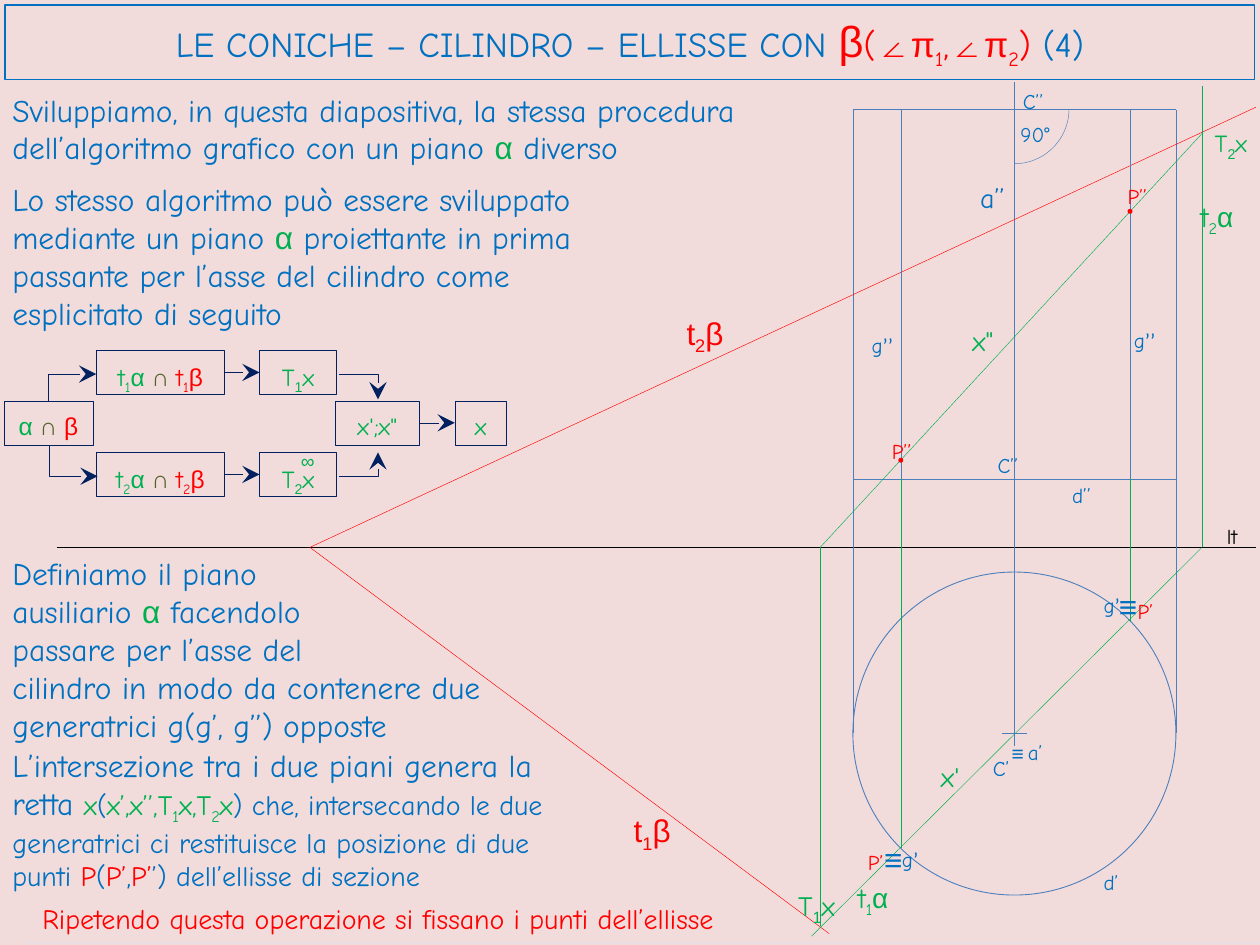
"""Build the slide on the cylinder cut by an oblique plane, with its two projections."""
from lxml.etree import SubElement
from pptx import Presentation
from pptx.dml.color import RGBColor
from pptx.enum.shapes import MSO_CONNECTOR as Link, MSO_SHAPE as Preset
from pptx.enum.text import MSO_ANCHOR as Anchor, PP_ALIGN as Align
from pptx.oxml.ns import qn
from pptx.util import Pt

COLOURS = {
    "paper": "F2DCDB", "blue": "0070C0", "red": "FF0000", "green": "00B050",
    "olive": "4F6228", "navy": "002060", "steel": "4B7EBC", "black": "000000",
    "lilac": "E6E0EC",
}
FONTS = {"arial": "Arial", "calibri": "Calibri"}


def colour(name):
    """Return the named colour."""
    return RGBColor.from_string(COLOURS[name])


class Sheet:
    """Hold the text style and the current slide."""

    def __init__(self, deck, font="Comic Neue"):
        """Start a slide with a plain background."""
        self.font = font
        self.slide = deck.slides.add_slide(deck.slide_layouts[5])
        self.shapes = self.slide.shapes
        backdrop = self.slide.background.fill
        backdrop.solid()
        backdrop.fore_color.rgb = colour("paper")

    def typeset(self, frame, size, paragraphs, align=Align.LEFT, spacing=None):
        """Fill a frame with paragraphs of (text, style words) parts."""
        frame.word_wrap = True
        for index, parts in enumerate(paragraphs):
            paragraph = frame.add_paragraph() if index else frame.paragraphs[0]
            paragraph.alignment = align
            if spacing:
                paragraph.line_spacing = spacing
            for text, style in parts:
                run = paragraph.add_run()
                run.text = text
                hue, *extras = style.split()
                run.font.name, run.font.size = self.font, Pt(size)
                run.font.color.rgb = colour(hue)
                for extra in extras:
                    if extra == "sub":
                        run.font._element.set("baseline", "-25000")
                    elif extra in FONTS:
                        run.font.name = FONTS[extra]
                    else:
                        run.font.size = Pt(float(extra))

    def title(self, left, top, width, height, size, *parts):
        """Place the framed title."""
        heading = self.shapes.title
        heading.left, heading.top = Pt(left), Pt(top)
        heading.width, heading.height = Pt(width), Pt(height)
        heading.line.color.rgb = colour("blue")
        heading.line.width = Pt(0.75)
        heading.text_frame.vertical_anchor = Anchor.MIDDLE
        self.typeset(heading.text_frame, size, [parts], Align.CENTER)

    def block(self, left, top, width, height, size, *paragraphs, **layout):
        """Place a block of running text."""
        box = self.shapes.add_textbox(Pt(left), Pt(top), Pt(width), Pt(height))
        self.typeset(box.text_frame, size, paragraphs, **layout)

    def label(self, left, top, size, *parts, width=40, **layout):
        """Place a short label beside a point or line."""
        self.block(left, top, width, size * 1.2 + 7.2, size, parts, **layout)

    def outline(self, preset, left, top, width, height, hue, weight, fill=None):
        """Draw a preset shape."""
        shape = self.shapes.add_shape(preset, Pt(left), Pt(top), Pt(width), Pt(height))
        shape.shadow.inherit = False
        if fill:
            shape.fill.solid()
            shape.fill.fore_color.rgb = colour(fill)
        else:
            shape.fill.background()
        shape.line.color.rgb = colour(hue)
        shape.line.width = Pt(weight)
        return shape

    def step(self, left, top, width, *parts):
        """Draw a step of the flow diagram."""
        shape = self.outline(Preset.RECTANGLE, left, top, width, 25.2, "navy", 0.25)
        shape.text_frame.vertical_anchor = Anchor.TOP
        self.typeset(shape.text_frame, 14, [parts], Align.CENTER, 1.15)
        return shape

    def line(self, x1, y1, x2, y2, hue, weight=0.25, kind=Link.STRAIGHT):
        """Draw a line between two points."""
        line = self.shapes.add_connector(kind, Pt(x1), Pt(y1), Pt(x2), Pt(y2))
        line.line.color.rgb = colour(hue)
        line.line.width = Pt(weight)
        SubElement(line._element.spPr, qn("a:effectLst"))
        return line

    def head(self, line):
        """Put a stealth arrowhead at the end of a line."""
        SubElement(line.line._get_or_add_ln(), qn("a:tailEnd"), type="stealth", w="lg", len="lg")

    def arrow(self, start, end):
        """Join the right side of one step to the left side of the next."""
        line = self.line(0, 0, 1, 1, "navy")
        line.begin_connect(start, 3)
        line.end_connect(end, 1)
        self.head(line)

    def elbow(self, x1, y1, x2, y2, bend):
        """Draw an arrow that turns at the given percentage of its width."""
        line = self.line(x1, y1, x2, y2, "navy", kind=Link.ELBOW)
        stops = line._element.spPr.find(qn("a:prstGeom")).find(qn("a:avLst"))
        SubElement(stops, qn("a:gd"), name="adj1", fmla=f"val {bend * 1000}")
        self.head(line)


def trace(number, hue, plane, font=""):
    """Return the parts of the name of a plane's trace."""
    return ("t", f"{hue} {font}"), (number, f"{hue} {font} sub"), (plane, f"{hue} arial")


def trace_point(number):
    """Return the parts of the name of a trace point of line x."""
    return ("T", "green"), (number, "green arial sub"), ("x", "green")


def draw_projections(sheet):
    """Draw both projections of the cylinder and of the two planes."""
    left, axis, right = 487.4, 579.6, 672
    near, far = 514.8, 645.8
    top, base, ground, centre = 62.6, 273.6, 312.8, 419
    vertex, trace_foot, trace_side = 177.1, 468.7, 686.9

    sheet.line(32.4, ground, 717.8, ground, "black")
    sheet.outline(Preset.OVAL, left, 326.9, right - left, right - left, "steel", 0.5)
    for x in (left, right):
        sheet.line(x, top, x, centre, "steel")
    for y in (top, base):
        sheet.line(left, y, right, y, "steel")
    sheet.line(axis, 46.8, axis, centre + 7.2, "steel")
    sheet.line(axis - 7, centre, axis + 7, centre, "steel")
    right_angle = sheet.outline(Preset.ARC, axis - 31.3, 31, 62.6, 62.6, "steel", 0.25)
    right_angle.adjustments[0], right_angle.adjustments[1] = 0, 54

    sheet.line(vertex, ground, 717.8, 61.2, "red")
    sheet.line(vertex, ground, 473.8, 533.5, "red")
    sheet.line(trace_side, ground, 463.7, 535, "green")
    sheet.line(trace_side, 49, trace_side, ground, "green")
    sheet.line(trace_foot, ground, trace_foot, 529.2, "green")
    sheet.line(trace_foot, ground, trace_side, 76.3, "green")
    for x, section, foot in ((near, 263, 484.6), (far, 120.8, 355.7)):
        sheet.line(x, section, x, foot, "green")
        sheet.line(x, top, x, base, "steel")
        sheet.outline(Preset.OVAL, x - 0.4, section - 0.4, 0.8, 0.8, "red", 2, "red")
    sheet.line(15, 538.6, 720, 538.6, "lilac", 0.75)


def draw_labels(sheet):
    """Name the points and lines of the projections."""
    for left, top, size, text, hue in (
        (563, 254.9, 12, "C’’", "blue"), (560.2, 428.4, 12, "C’", "blue"),
        (605.5, 272.2, 12, "d’’", "blue"), (623.5, 493.2, 12, "d’", "blue"),
        (553, 99.4, 16, "a’’", "blue"), (580.3, 419, 12, "a’", "blue"),
        (577.4, 46.8, 12, "C’’", "blue"), (576, 66.2, 12, "90°", "blue"),
        (530.6, 430.6, 16, "x'", "green"), (548.6, 181.4, 16, "x\"", "green"),
        (488.9, 481.7, 12, "P’", "red"), (502.6, 247, 12, "P’’", "red"),
        (643, 338.4, 12, "P’", "red"), (637.2, 101.5, 12, "P’’", "red"),
        (571, 419.8, 12, "≡", "blue arial"), (498.2, 476.6, 18, "≡", "blue arial"),
        (632.2, 331.9, 18, "≡", "blue arial"),
    ):
        sheet.label(left, top, size, (text, hue))
    sheet.label(694, 295.9, 12, ("lt", "black"), width=26)
    for left, top, primes in (
        (491, 186.5, "’’"), (640.8, 183.6, "’’"), (508.3, 480.2, "’"), (623.5, 334.8, "’"),
    ):
        sheet.label(left, top, 12, ("g", "blue"), (primes, "blue calibri"))
    sheet.label(385.2, 175.7, 18, *trace("2", "red", "β", "arial"))
    sheet.label(355, 460.1, 18, *trace("1", "red", "β", "arial"))
    sheet.label(483.1, 499.7, 16, *trace("1", "green", "α"))
    sheet.label(679, 110.2, 16, *trace("2", "green", "α"))
    centred = {"align": Align.CENTER, "spacing": 1.15, "width": 44}
    sheet.label(444.6, 501.1, 16, *trace_point("1"), **centred)
    sheet.label(681.4, 67, 14, *trace_point("2"), **centred)


def draw_flow(sheet):
    """Draw the steps that lead from the two planes to line x."""
    upper, middle, lower = 200.2, 229, 258.5
    meet = ("∩ ", "olive arial")
    sheet.step(2.2, middle, 51, ("α ", "green arial"), meet, ("β", "red arial"))
    for number, row in (("1", upper), ("2", lower)):
        traces = sheet.step(55, row, 73.4, *trace(number, "green", "α "), meet,
                            *trace(number, "red", "β"))
        sheet.arrow(traces, sheet.step(148.3, row, 44, *trace_point(number)))
    projections = sheet.step(191.5, middle, 48.2, ("x';x\"", "green"))
    sheet.arrow(projections, sheet.step(259.9, middle, 29.5, ("x", "green")))
    sheet.elbow(27.4, middle, 55, 213.8, 0)
    sheet.elbow(28.1, 254.9, 55.8, 272.2, 0)
    sheet.elbow(193.7, 213.8, 216, 228.2, 100)
    sheet.elbow(193.7, 272.2, 216, 258.5, 100)
    sheet.label(164.9, 253.4, 11, ("∞", "green arial"))


def explain(sheet):
    """Place the title and the explanation."""
    sheet.title(2.9, 2.9, 714.2, 42.5, 20,
                ("LE CONICHE – CILINDRO – ELLISSE CON ", "blue"), ("β", "red arial 24.8"),
                ("(", "red"), ("∠π", "red arial"), ("1", "red sub"), (",", "red"),
                ("∠π", "red arial"), ("2", "red sub"), (") ", "red"), ("(4)", "blue"))
    alpha = ("α", "green arial")
    sheet.block(0, 48.2, 469.4, 51, 18, [
        ("Sviluppiamo, in questa diapositiva, la stessa procedura dell’algoritmo grafico"
         " con un piano ", "blue"), alpha, (" diverso", "blue")])
    sheet.block(0, 99.4, 366.5, 94.3, 18, [
        ("Lo stesso algoritmo può essere sviluppato mediante un piano ", "blue"), alpha,
        (" proiettante in prima passante per l’asse del cilindro come esplicitato di seguito",
         "blue")])
    sheet.block(0, 313.2, 283.7, 116.6, 18,
                [("Definiamo il piano", "blue")],
                [("ausiliario ", "blue"), alpha, (" facendolo", "blue")],
                [("passare per l’asse del", "blue")],
                [("cilindro in modo da contenere due generatrici g(g’, g’’) opposte", "blue")])
    sheet.block(0, 422.6, 335.5, 90, 16, [
        ("L’intersezione tra i due piani genera la retta ", "blue 18"), ("x", "green"),
        ("(", "blue"), ("x’,x’’,T", "green"), ("1", "green sub"), ("x,T", "green"),
        ("2", "green sub"), ("x", "green"),
        (") che, intersecando le due generatrici ci restituisce la posizione di due punti ",
         "blue"),
        ("P", "red"), ("(", "blue"), ("P’", "red"), (",", "blue"), ("P’", "red"),
        ("’) dell’ellisse di sezione", "blue")])
    sheet.block(-2.9, 511.9, 437.8, 26.6, 16, [
        ("Ripetendo questa operazione si fissano i punti dell’ellisse", "red")],
        align=Align.CENTER)


def main():
    """Build and save the deck."""
    deck = Presentation()
    deck.slide_width, deck.slide_height = Pt(720), Pt(540)
    sheet = Sheet(deck)
    for part in (draw_projections, draw_flow, draw_labels, explain):
        part(sheet)
    deck.save("out.pptx")


if __name__ == "__main__":
    main()
